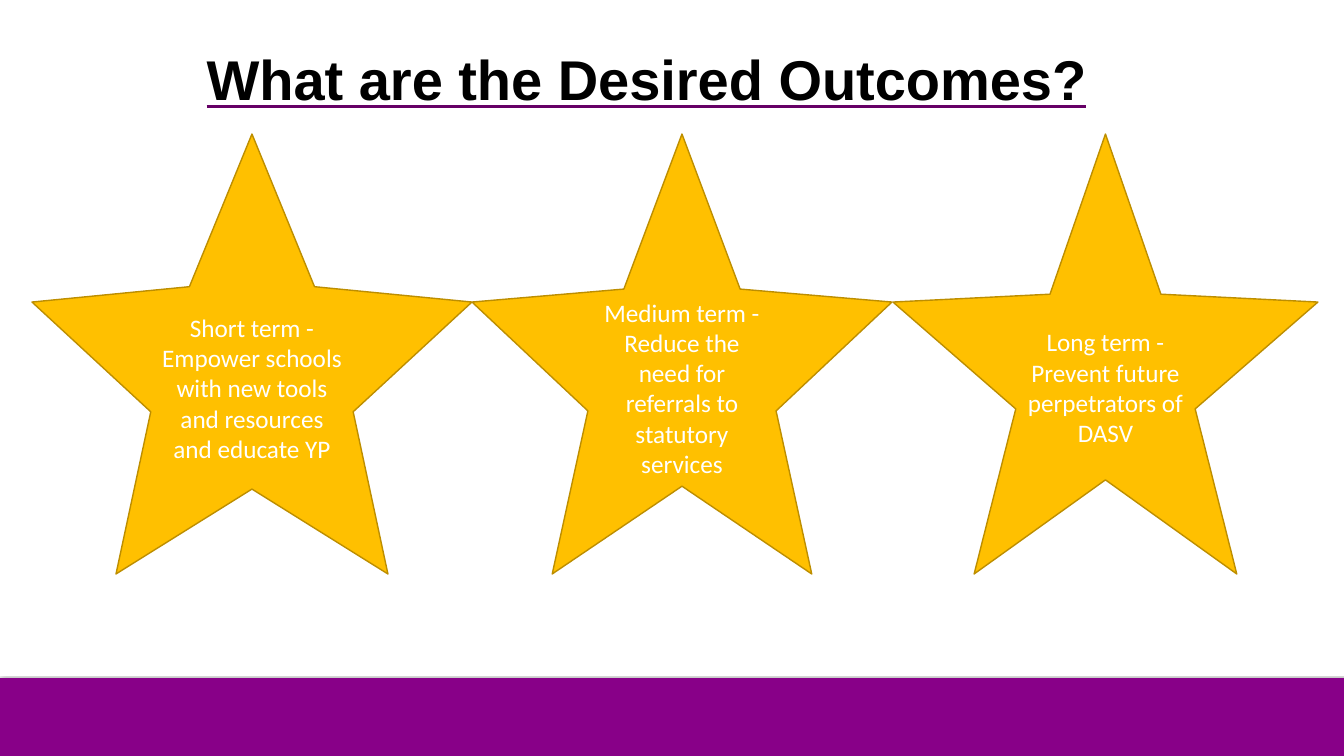
from lxml import etree
from pptx import Presentation
from pptx.dml.color import RGBColor
from pptx.enum.shapes import MSO_SHAPE
from pptx.enum.text import MSO_ANCHOR, MSO_AUTO_SIZE, PP_ALIGN
from pptx.oxml import parse_xml
from pptx.oxml.ns import nsdecls, qn
from pptx.util import Pt

PX = 12192000 / 1344
RECT = MSO_SHAPE.RECTANGLE
STAR = MSO_SHAPE.STAR_5_POINT
MIDDLE = MSO_ANCHOR.MIDDLE
CENTER = PP_ALIGN.CENTER
NO_AUTOFIT = MSO_AUTO_SIZE.NONE

BAR_SHADOW = (
    f'<a:effectLst {nsdecls("a")}><a:outerShdw blurRad="12700" dist="0" dir="5400000" '
    'rotWithShape="0"><a:srgbClr val="000000"><a:alpha val="50000"/></a:srgbClr>'
    '</a:outerShdw></a:effectLst>'
)


def px(n):
    return round(n * PX)


def rgb(value):
    return RGBColor.from_string(value)


class Deck:
    purple = "880088"
    underline = "660066"
    gold = "FFC000"
    gold_edge = "BD8E00"
    black = "000000"
    white = "FFFFFF"
    title_font = "Arial"
    body_font = "Calibri"

    def __init__(self, width, height):
        self.prs = Presentation()
        self.prs.slide_width = px(width)
        self.prs.slide_height = px(height)
        self.s = self.prs.slides.add_slide(self.prs.slide_layouts[5])
        self.s.background.fill.solid()
        self.s.background.fill.fore_color.rgb = rgb(self.white)

    def run(self, p, text, font, size, color):
        p.alignment = CENTER
        r = p.add_run()
        r.text = text
        r.font.name = font
        r.font.size = Pt(size)
        r.font.color.rgb = rgb(color)
        return r

    def shape(self, kind, box, fill):
        sp = self.s.shapes.add_shape(kind, *map(px, box))
        sp.shadow.inherit = False
        sp.fill.solid()
        sp.fill.fore_color.rgb = rgb(fill)
        return sp

    def title(self, box, text):
        sp = self.s.shapes.title
        sp.left, sp.top, sp.width, sp.height = map(px, box)
        tf = sp.text_frame
        tf.word_wrap = True
        tf.auto_size = NO_AUTOFIT
        tf.vertical_anchor = MIDDLE
        p = tf.paragraphs[0]
        p.line_spacing = 0.9
        r = self.run(p, text, self.title_font, 40, self.black)
        r.font.bold = True
        r.font.underline = True
        latin = r.font._element.find(qn("a:latin"))
        u_fill = etree.Element(qn("a:uFill"))
        solid = etree.SubElement(u_fill, qn("a:solidFill"))
        etree.SubElement(solid, qn("a:srgbClr"), val=self.underline)
        latin.addprevious(u_fill)

    def bar(self, box):
        sp = self.shape(RECT, box, self.purple)
        sp.line.fill.background()
        effects = sp._element.spPr.find(qn("a:effectLst"))
        effects.getparent().replace(effects, parse_xml(BAR_SHADOW))

    def star(self, box, depth, lines):
        sp = self.shape(STAR, box, self.gold)
        sp.adjustments[0] = depth
        sp.line.color.rgb = rgb(self.gold_edge)
        sp.line.width = Pt(1)
        tf = sp.text_frame
        tf.word_wrap = True
        tf.vertical_anchor = MIDDLE
        for i, text in enumerate(lines):
            p = tf.add_paragraph() if i else tf.paragraphs[0]
            self.run(p, text, self.body_font, 18, self.white)


def main():
    deck = Deck(1344, 756)
    deck.bar((0, 678, 1344, 79))
    deck.title((67, 36, 1159, 93), "What are the Desired Outcomes?")
    outcomes = [
        (32, 440, 0.23, ["Short term -",
                         "Empower schools with new tools and resources and educate YP"]),
        (472, 420, 0.224, ["Medium term -",
                           "Reduce the need for referrals to statutory services"]),
        (893, 425, 0.211, ["Long term - Prevent future perpetrators of DASV"]),
    ]
    for left, width, depth, lines in outcomes:
        deck.star((left, 134, width, 440), depth, lines)
    deck.prs.save("out.pptx")


if __name__ == "__main__":
    main()
